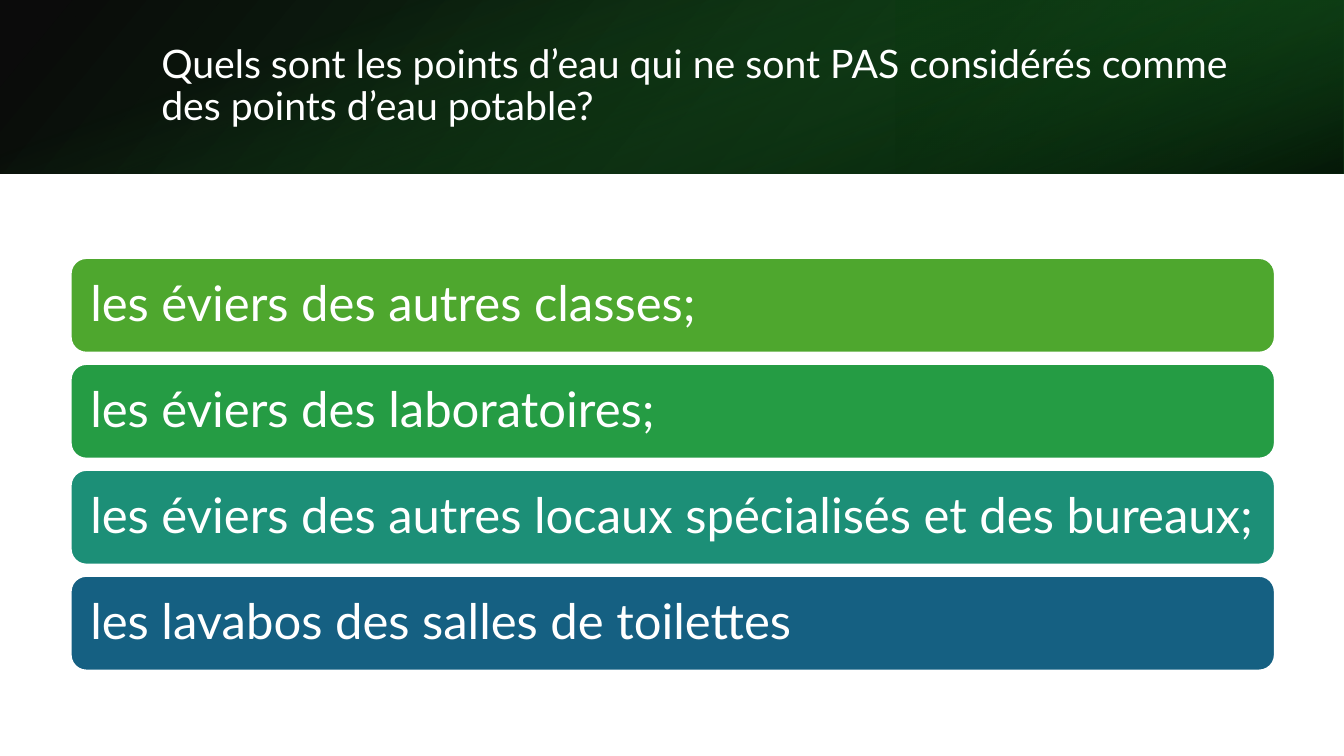
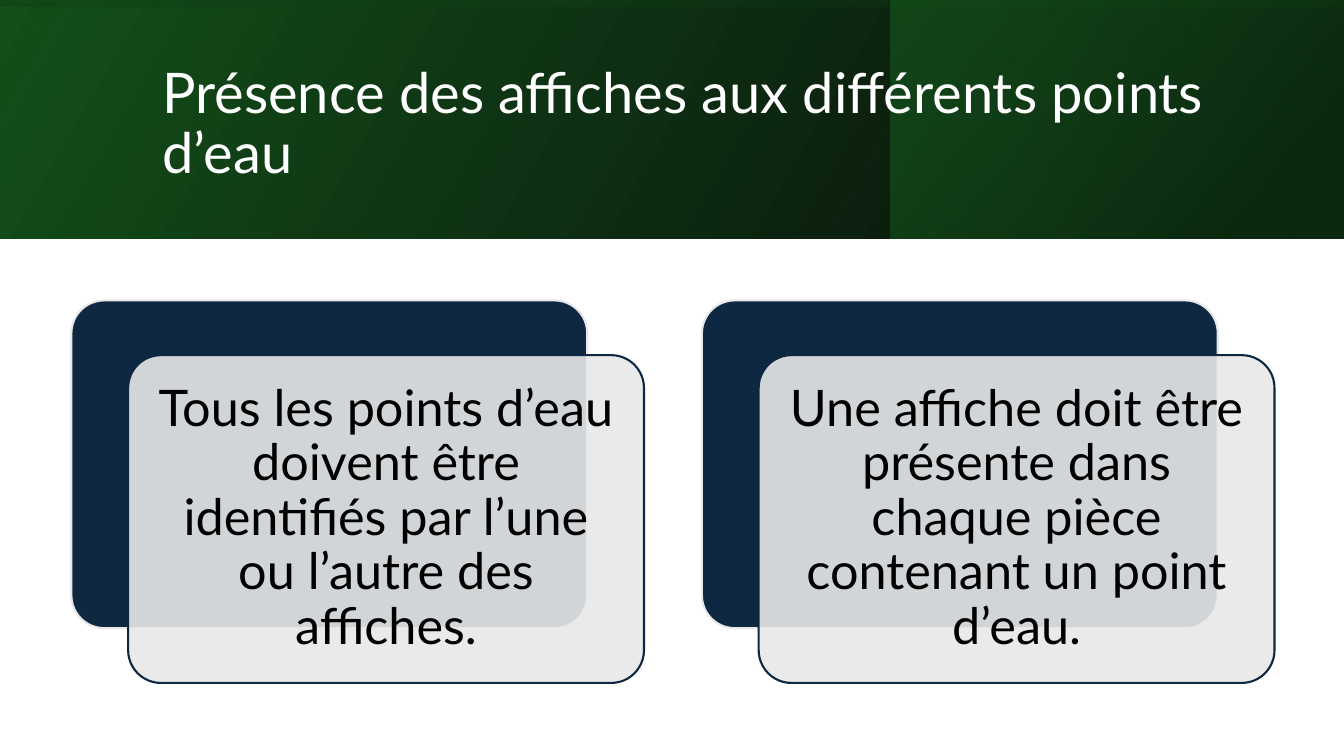
from dataclasses import dataclass

from lxml import etree
from pptx import Presentation
from pptx.dml.color import RGBColor
from pptx.enum import shapes, text
from pptx.oxml.ns import qn
from pptx.util import Cm, Pt


@dataclass(frozen=True)
class Theme:
    font: str = "Lato"
    white: str = "FFFFFF"
    black: str = "000000"
    forest: str = "13501B"
    moss: str = "0D3612"
    green: str = "196B24"
    navy: str = "0E2841"
    grey: str = "E8E8E8"
    bars: tuple = ("4EA72E", "259C44", "1C8F77", "156082")
    bar_size: int = 35
    card_size: int = 36
    line: float = 1.5
    spacing: float = 0.9
    inset: float = 0.38


T = Theme()
RECT = shapes.MSO_SHAPE.RECTANGLE
ROUND = shapes.MSO_SHAPE.ROUNDED_RECTANGLE
LEFT, CENTER = text.PP_ALIGN.LEFT, text.PP_ALIGN.CENTER
W, H = 33.87, 19.05


def add_box(s, kind, left, top, width, height, fill=None, line=None):
    sp = s.shapes.add_shape(kind, Cm(left), Cm(top), Cm(width), Cm(height))
    sp.shadow.inherit = False
    if fill:
        sp.fill.solid()
        sp.fill.fore_color.rgb = RGBColor.from_string(fill)
    if line:
        sp.line.color.rgb = RGBColor.from_string(line)
        sp.line.width = Pt(T.line)
    else:
        sp.line.fill.background()
    return sp


def write(sp, words, size, color, align):
    tf = sp.text_frame
    tf.text = words
    tf.word_wrap = True
    tf.auto_size = text.MSO_AUTO_SIZE.NONE
    tf.vertical_anchor = text.MSO_ANCHOR.MIDDLE
    p = tf.paragraphs[0]
    p.alignment = align
    p.line_spacing = T.spacing
    r = p.runs[0]
    r.font.name = T.font
    r.font.size = Pt(size)
    r.font.color.rgb = RGBColor.from_string(color)
    return tf


prs = Presentation()
prs.slide_width, prs.slide_height = Cm(W), Cm(H)

# Each layer: rotation, flipped, angle, (position %, colour, opacity %) of both stops.
# The layers are the base, the right-hand panel and the turned overlay.
headers = [
    dict(
        title="Quels sont les points d’eau qui ne sont PAS considérés comme des points d’eau potable?",
        size=28, height=4.37, panel=22.58, frame=(3.81, 0.97, 27.89, 2.44),
        layers=[
            (0, True, 140, (0, T.black, 96), (100, T.forest, 100)),
            (180, True, 320, (19, T.moss, 68), (100, T.green, 79)),
            (90, False, 340, (23, T.green, 0), (99, T.black, 74)),
        ],
    ),
    dict(
        title="Présence des affiches aux différents points d’eau",
        size=40, height=6.02, panel=22.45, frame=(3.84, 0.97, 27, 4.37),
        layers=[
            (0, True, 330, (0, T.black, 96), (100, T.forest, 100)),
            (0, True, 320, (19, T.moss, 68), (100, T.green, 48)),
            (270, True, 350, (23, T.forest, 16), (99, T.black, 45)),
        ],
    ),
]

for header in headers:
    s = prs.slides.add_slide(prs.slide_layouts[5])
    h, panel = header["height"], header["panel"]
    frames = [(0, 0, W, h), (panel, 0, W - panel, h), ((W - h) / 2, (h - W) / 2, h, W)]
    for frame, (rotation, flipped, angle, *stops) in zip(frames, header["layers"]):
        sp = add_box(s, RECT, *frame)
        sp.rotation = rotation
        if flipped:
            sp.element.spPr.find(qn("a:xfrm")).set("flipH", "1")
        sp.fill.gradient()
        sp.fill.gradient_angle = 360 - angle
        for stop, (position, color, opacity) in zip(sp.fill.gradient_stops, stops):
            stop.position = position / 100
            stop.color.rgb = RGBColor.from_string(color)
        for gs, (position, color, opacity) in zip(sp.element.iter(qn("a:gs")), stops):
            etree.SubElement(gs[0], qn("a:alpha")).set("val", str(opacity * 1000))

    title = s.shapes.title
    title.left, title.top, title.width, title.height = map(Cm, header["frame"])
    write(title, header["title"], header["size"], T.white, LEFT)
    s.shapes.element.append(title.element)  # in front of the band

# Slide 1: stacked bars
answers = [
    "les éviers des autres classes;",
    "les éviers des laboratoires;",
    "les éviers des autres locaux spécialisés et des bureaux;",
    "les lavabos des salles de toilettes",
]
for i, (answer, color) in enumerate(zip(answers, T.bars)):
    sp = add_box(prs.slides[0], ROUND, 1.78, 6.5 + i * 2.67, 30.35, 2.39, color, T.white)
    tf = write(sp, answer, T.bar_size, T.white, LEFT)
    tf.margin_left, tf.margin_right = Cm(T.inset), Cm(0.3)

# Slide 2: cards, each over an offset backing
rules = [
    "Tous les points d’eau doivent être identifiés par l’une ou l’autre des affiches.",
    "Une affiche doit être présente dans chaque pièce contenant un point d’eau.",
]
for i, rule in enumerate(rules):
    left, top, size = 1.8 + i * 15.89, 7.57, (13, 8.26)
    backing = add_box(prs.slides[1], ROUND, left, top, *size, T.navy, T.grey)
    card = add_box(prs.slides[1], ROUND, left + 1.43, top + 1.38, *size, T.grey, T.navy)
    backing.adjustments[0] = card.adjustments[0] = 0.1
    tint = card.element.spPr.find(qn("a:solidFill"))[0]
    etree.SubElement(tint, qn("a:alpha")).set("val", "90000")
    tf = write(card, rule, T.card_size, T.black, CENTER)
    tf.margin_left = tf.margin_right = tf.margin_top = tf.margin_bottom = Cm(T.inset)

prs.save("out.pptx")
